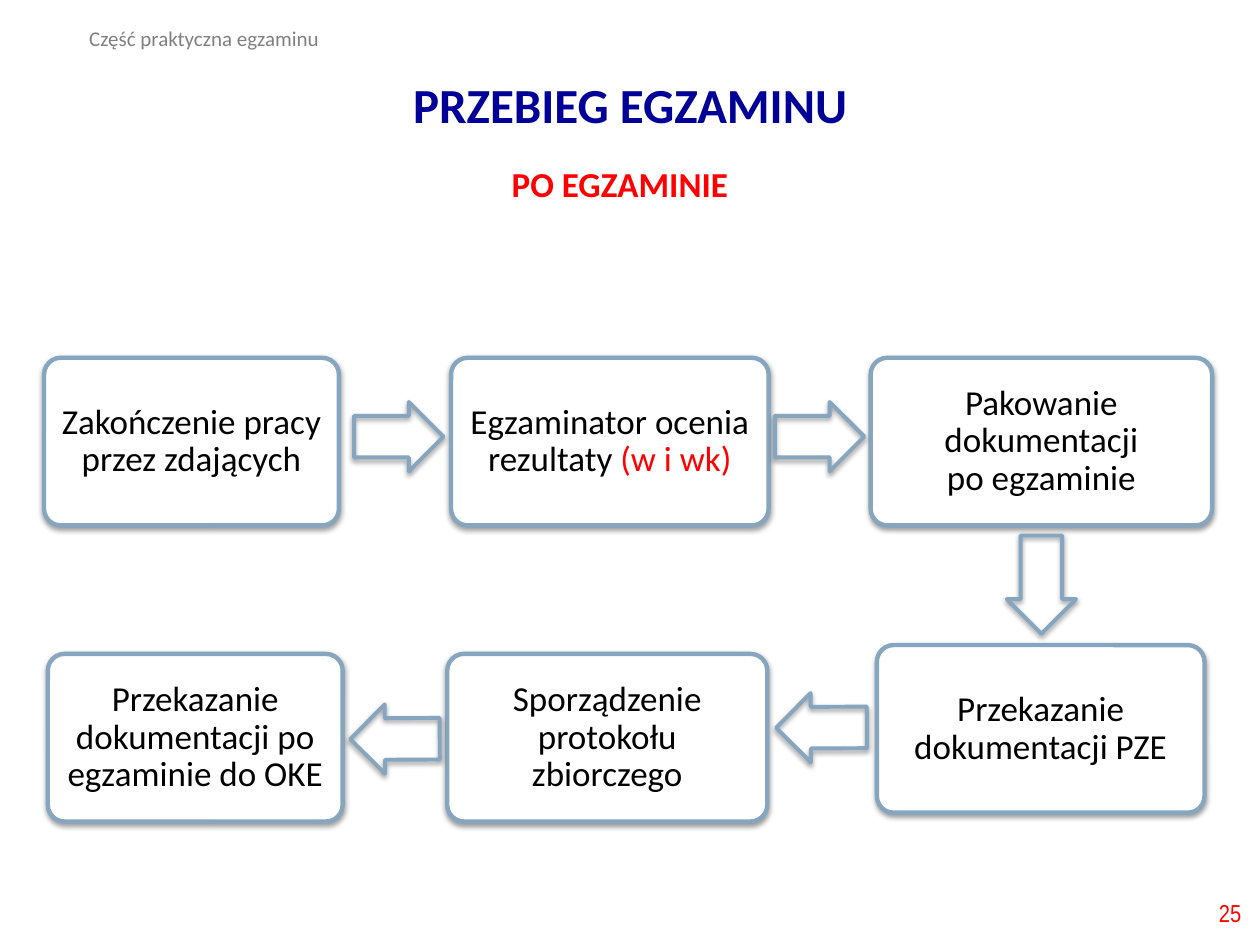
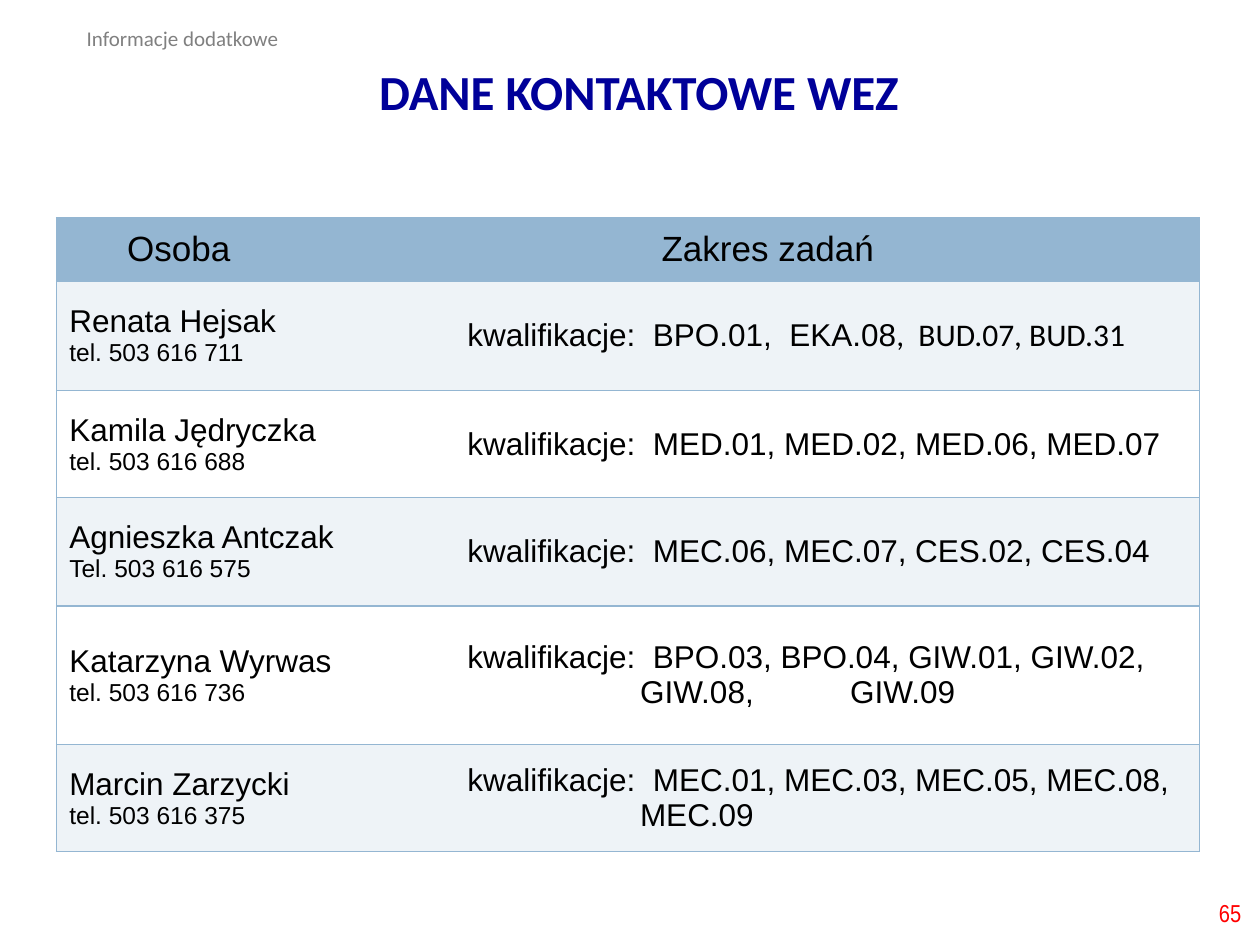
from lxml.etree import SubElement
from pptx import Presentation
from pptx.dml.color import RGBColor
from pptx.enum.shapes import MSO_SHAPE as SHAPE
from pptx.enum.text import MSO_ANCHOR as ANCHOR, PP_ALIGN as ALIGN
from pptx.oxml import parse_xml
from pptx.oxml.ns import nsdecls, qn
from pptx.util import Inches, Pt

NAVY = RGBColor(0x00, 0x00, 0x99)
RED = RGBColor(0xFF, 0x00, 0x00)
GRAY = RGBColor(0x80, 0x80, 0x80)
BLACK = RGBColor(0x00, 0x00, 0x00)
WHITE = RGBColor(0xFF, 0xFF, 0xFF)
STEEL = RGBColor(0x86, 0xA5, 0xBE)
SKY = RGBColor(0x94, 0xB6, 0xD2)
PALE = RGBColor(0xEE, 0xF3, 0xF7)
NO_GRID_STYLE = "{2D5ABB26-0587-4C30-8999-92F81FD0307C}"


def write(holder, text, size=20, font="Calibri", color=BLACK, bold=False, tracking=0,
          align=ALIGN.LEFT, spacing=None, anchor=None, new=False):
    """Add text to a box, shape or cell; \\n makes a line break. Return the paragraph."""
    frame = holder.text_frame
    frame.word_wrap = True
    if anchor is not None:
        frame.vertical_anchor = anchor
    para = frame.add_paragraph() if new else frame.paragraphs[-1]
    para.alignment = align
    if spacing:
        para.line_spacing = spacing
    for number, line in enumerate(text.split("\n")):
        if number:
            para.add_line_break()
        span = para.add_run()
        span.text = line
        span.font.size, span.font.name, span.font.bold = Pt(size), font, bold
        span.font.color.rgb = color
        if tracking:
            span._r.get_or_add_rPr().set("spc", str(tracking * 100))
    return para


def add_outlined(page, preset, place, width):
    """Add a preset shape with a steel outline and a soft shadow below it."""
    shape = page.shapes.add_shape(preset, *map(Inches, place))
    shape.line.color.rgb = STEEL
    shape.line.width = Pt(width)
    shape.fill.background()
    shape._element.spPr.append(parse_xml(
        f'<a:effectLst {nsdecls("a")}><a:outerShdw blurRad="{Pt(3.1)}" dist="{Pt(1.6)}" '
        'dir="5400000" rotWithShape="0"><a:srgbClr val="000000"><a:alpha val="38000"/>'
        '</a:srgbClr></a:outerShdw></a:effectLst>'))
    return shape


deck = Presentation()
deck.slide_width, deck.slide_height = Inches(10), Inches(7.5)

# Section label, title and page number of each slide
heading = dict(size=28, color=NAVY, bold=True, align=ALIGN.CENTER, spacing=0.9,
               anchor=ANCHOR.MIDDLE)
label = dict(size=12, color=GRAY)
page_number = dict(size=14, font="Arial Narrow", color=RED, align=ALIGN.RIGHT,
                   anchor=ANCHOR.MIDDLE)
pages = []
for title, title_place, section, section_left, number in [
    ("PRZEBIEG EGZAMINU", (0.69, 0.64, 8.62, 0.43), "Część praktyczna egzaminu", 0.61, "25"),
    ("DANE KONTAKTOWE WEZ", (0.17, 0.5, 9.8, 0.5), "Informacje dodatkowe", 0.59, "65"),
]:
    page = deck.slides.add_slide(deck.slide_layouts[6])
    pages.append(page)
    for text, place, style in [
        (title, title_place, heading),
        (section, (section_left, 0.15, 2.67, 0.3), label),
        (number, (7.7, 7.04, 2.25, 0.4), page_number),
    ]:
        write(page.shapes.add_textbox(*map(Inches, place)), text, **style)
process_page, contact_page = pages

# Subtitle
subtitle = process_page.shapes.add_textbox(*map(Inches, (0.61, 1.26, 8.62, 0.43)))
write(subtitle, "PO EGZAMINIE", color=RED, bold=True, align=ALIGN.CENTER, spacing=0.9,
      anchor=ANCHOR.MIDDLE)

# Steps after the exam
step_style = dict(align=ALIGN.CENTER, spacing=0.9, anchor=ANCHOR.MIDDLE)
for left, top, width, text, red_text in [
    (0.35, 2.84, 2.34, "Zakończenie pracy przez zdających", ""),
    (3.58, 2.84, 2.52, "Egzaminator ocenia rezultaty ", "(w i wk)"),
    (6.91, 2.84, 2.71, "Pakowanie dokumentacji\npo egzaminie", ""),
    (6.96, 5.12, 2.6, "Przekazanie dokumentacji PZE", ""),
    (3.55, 5.19, 2.54, "Sporządzenie protokołu zbiorczego", ""),
    (0.38, 5.19, 2.34, "Przekazanie dokumentacji po egzaminie do OKE", ""),
]:
    step = add_outlined(process_page, SHAPE.ROUNDED_RECTANGLE, (left, top, width, 1.33), 2.5)
    step.adjustments[0] = 0.1
    step.fill.solid()
    step.fill.fore_color.rgb = WHITE
    frame = step.text_frame
    frame.margin_left = frame.margin_right = Inches(0.07)
    frame.margin_top = frame.margin_bottom = Inches(0.07)
    write(step, text, **step_style)
    if red_text:
        write(step, red_text, color=RED, **step_style)

# Arrows between the steps
for preset, place, turn in [
    (SHAPE.RIGHT_ARROW, (2.81, 3.19, 0.71, 0.55), 0),
    (SHAPE.RIGHT_ARROW, (6.15, 3.19, 0.71, 0.55), 0),
    (SHAPE.DOWN_ARROW, (7.99, 4.25, 0.55, 0.78), 0),
    (SHAPE.LEFT_ARROW, (6.16, 5.5, 0.72, 0.55), -0.3),
    (SHAPE.LEFT_ARROW, (2.78, 5.59, 0.71, 0.55), -0.3),
]:
    arrow = add_outlined(process_page, preset, place, 2.25)
    arrow.adjustments[0], arrow.adjustments[1] = 0.6, 0.5
    arrow.rotation = turn

# Contact table
contacts = [
    ("Renata Hejsak", "tel. 503 616 711", "BPO.01,  EKA.08"),
    ("Kamila Jędryczka", "tel. 503 616 688", "MED.01, MED.02, MED.06, MED.07"),
    ("Agnieszka Antczak", "Tel. 503 616 575", "MEC.06, MEC.07, CES.02, CES.04"),
    ("Katarzyna Wyrwas", "tel. 503 616 736", "BPO.03, BPO.04, GIW.01, GIW.02, GIW.08,"),
    ("Marcin Zarzycki", "tel. 503 616 375", "MEC.01, MEC.03, MEC.05, MEC.08, MEC.09"),
]
table = contact_page.shapes.add_table(
    len(contacts) + 1, 2, *map(Inches, (0.45, 1.73, 9.07, 5.03))).table
table._tbl.tblPr.find(qn("a:tableStyleId")).text = NO_GRID_STYLE
table.first_row = table.horz_banding = False
for column, width in zip(table.columns, (3.16, 5.91)):
    column.width = Inches(width)
for row, height in zip(table.rows, (0.5, 0.87, 0.85, 0.86, 1.1, 0.85)):
    row.height = Inches(height)

# Borders around each row, and row fills
for row_number, row in enumerate(table.rows):
    for cell, side in zip(row.cells, ("lnL", "lnR")):
        cell.vertical_anchor = ANCHOR.MIDDLE
        for edge in (side, "lnT", "lnB"):
            border = SubElement(cell._tc.get_or_add_tcPr(), qn(f"a:{edge}"), w=str(Pt(1)))
            paint = SubElement(border, qn("a:solidFill"))
            SubElement(paint, qn("a:srgbClr"), val=str(SKY))
        cell.fill.solid()
        cell.fill.fore_color.rgb = SKY if row_number == 0 else (WHITE, PALE)[row_number % 2]

# Header texts, set in from the left
for column_number, (text, indent) in enumerate([("Osoba", 0.46), ("Zakres zadań", 1.54)]):
    para = write(table.cell(0, column_number), text, font="Arial")
    para._p.get_or_add_pPr().set("marL", str(Inches(indent)))

# People and their qualifications
for row_number, (person, phone, codes) in enumerate(contacts, 1):
    person_cell, codes_cell = table.rows[row_number].cells
    write(person_cell, person, size=18, font="Arial")
    write(person_cell, phone, size=14, font="Arial", new=True)
    para = write(codes_cell, f"kwalifikacje:  {codes}", size=18, font="Arial")
    if row_number >= 4:
        properties = para._p.get_or_add_pPr()
        properties.set("marL", str(Inches(1.37)))
        properties.set("indent", str(-Inches(1.37)))

# Endings in another format: Calibri codes, and a code after a wide gap
write(table.cell(1, 1), ",  BUD.07, BUD.31", size=18)
write(table.cell(4, 1), " ", size=18, font="Arial", tracking=50)
write(table.cell(4, 1), "GIW.09", size=18, font="Arial")

deck.save("out.pptx")
